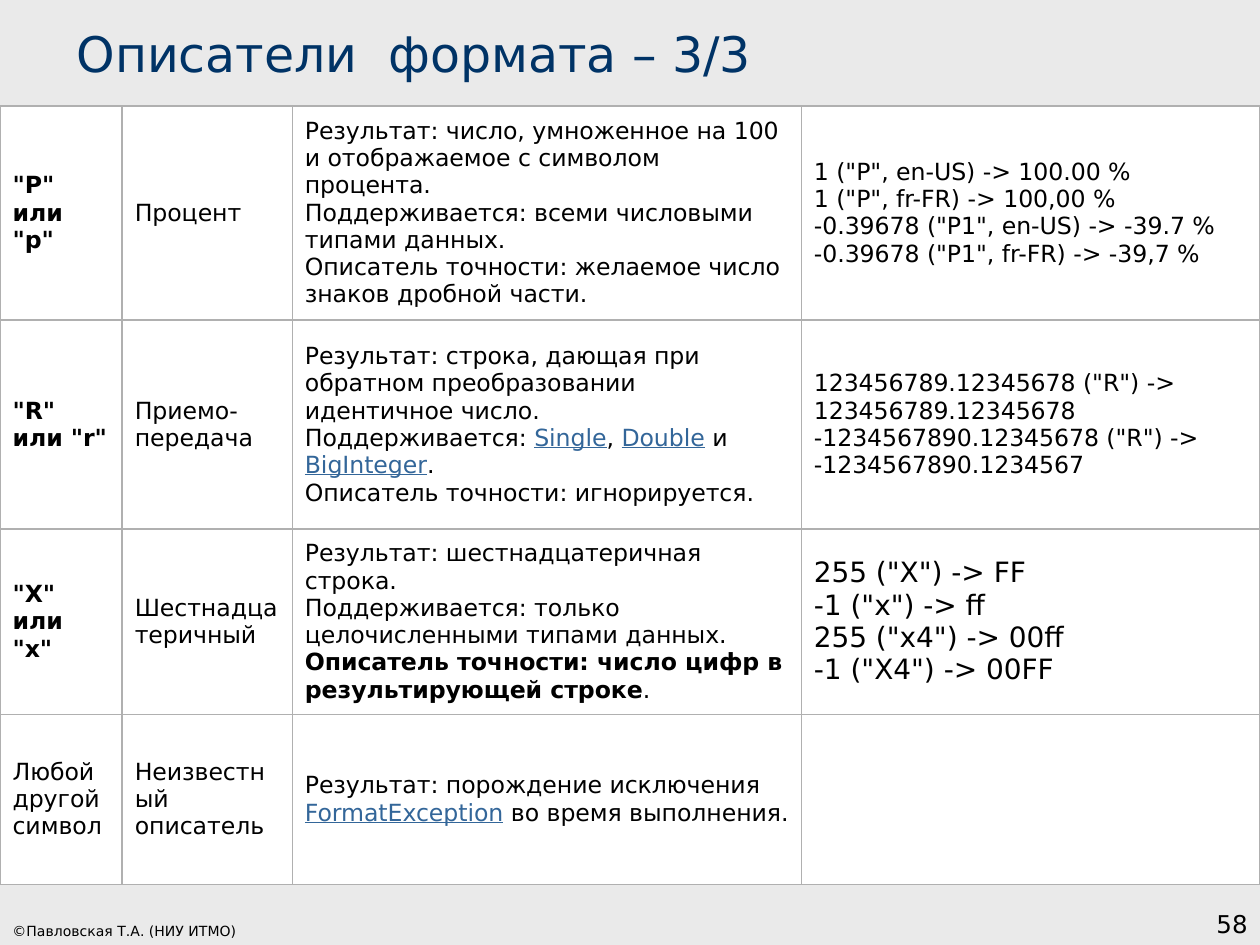
from lxml import etree
from pptx import Presentation
from pptx import util as u
from pptx.dml.color import RGBColor
from pptx.enum import text as t
from pptx.oxml import ns

BACKDROP = RGBColor(0xEA, 0xEA, 0xEA)
NAVY = RGBColor(0x00, 0x33, 0x66)
LINK = RGBColor(0x33, 0x66, 0x99)
BLACK = RGBColor(0x00, 0x00, 0x00)
WHITE = RGBColor(0xFF, 0xFF, 0xFF)
RULE = RGBColor(0xB0, 0xB0, 0xB0)
FONT = "DejaVu Sans"

deck = Presentation()
deck.slide_width, deck.slide_height = u.Inches(10), u.Inches(7.5)
col, row = deck.slide_width / 100, deck.slide_height / 100
slide = deck.slides.add_slide(deck.slide_layouts[6])
slide.background.fill.solid()
slide.background.fill.fore_color.rgb = BACKDROP


def write(frame, content, size=13.5, color=BLACK, align=t.PP_ALIGN.LEFT):
    frame.word_wrap = True
    for index, line in enumerate(content.split("\n")):
        paragraph = frame.add_paragraph() if index else frame.paragraphs[0]
        paragraph.alignment = align
        for strong, part in enumerate(line.split("*")):
            for linked, piece in enumerate(part.split("~")):
                if piece:
                    run = paragraph.add_run()
                    run.text = piece
                    run.font.name, run.font.size = FONT, u.Pt(size)
                    run.font.bold = strong % 2 == 1
                    run.font.underline = linked % 2 == 1
                    run.font.color.rgb = LINK if linked % 2 else color


def outline(cell):
    properties = cell._tc.get_or_add_tcPr()
    for side in ("lnL", "lnR", "lnT", "lnB"):
        line = etree.SubElement(properties, ns.qn(f"a:{side}"), w=str(u.Pt(1)))
        solid = etree.SubElement(line, ns.qn("a:solidFill"))
        etree.SubElement(solid, ns.qn("a:srgbClr"), val=str(RULE))


captions = [
    ("Описатели  формата – 3/3", (5.1, 1.73, 93.7, 7.6), dict(size=28, color=NAVY)),
    ("©Павловская Т.А. (НИУ ИТМО)", (0, 96.27, 31.1, 3.73), dict(size=8)),
    ("58", (79.2, 93.33, 20.8, 6.67), dict(size=14, align=t.PP_ALIGN.RIGHT)),
]
for caption, (left, top, width, height), style in captions:
    area = slide.shapes.add_textbox(
        int(left * col), int(top * row), int(width * col), int(height * row))
    area.text_frame.vertical_anchor = t.MSO_ANCHOR.BOTTOM
    write(area.text_frame, caption, **style)

specifiers = [
    ('*"P" или "p"*',
     "Процент",
     "Результат: число, умноженное на 100 и отображаемое с символом процента.\n"
     "Поддерживается: всеми числовыми типами данных.\n"
     "Описатель точности: желаемое число знаков дробной части.",
     '1 ("P", en-US) -> 100.00 %\n'
     '1 ("P", fr-FR) -> 100,00 %\n'
     '-0.39678 ("P1", en-US) -> -39.7 %\n'
     '-0.39678 ("P1", fr-FR) -> -39,7 %'),
    ('*"R" или "r"*',
     "Приемо-передача",
     "Результат: строка, дающая при обратном преобразовании идентичное число.\n"
     "Поддерживается: ~Single~, ~Double~ и ~BigInteger~.\n"
     "Описатель точности: игнорируется.",
     '123456789.12345678 ("R") -> 123456789.12345678\n'
     '-1234567890.12345678 ("R") -> -1234567890.1234567'),
    ('*"X" или "x"*',
     "Шестнадцатеричный",
     "Результат: шестнадцатеричная строка.\n"
     "Поддерживается: только целочисленными типами данных.\n"
     "*Описатель точности: число цифр в результирующей строке*.",
     '255 ("X") -> FF\n'
     '-1 ("x") -> ff\n'
     '255 ("x4") -> 00ff\n'
     '-1 ("X4") -> 00FF'),
    ("Любой другой символ",
     "Неизвестный описатель",
     "Результат: порождение исключения ~FormatException~ во время выполнения.",
     ""),
]
column_shares = [9.7, 13.5, 40.4, 36.4]
row_shares = [22.67, 22.13, 19.6, 18]
large_examples = (2, 3)

formats = slide.shapes.add_table(
    len(row_shares), len(column_shares), 0, int(11.2 * row),
    int(sum(column_shares) * col), int(sum(row_shares) * row)).table
for column, share in zip(formats.columns, column_shares):
    column.width = int(share * col)
for table_row, share in zip(formats.rows, row_shares):
    table_row.height = int(share * row)
for r, specifier in enumerate(specifiers):
    for c, content in enumerate(specifier):
        cell = formats.cell(r, c)
        outline(cell)
        cell.fill.solid()
        cell.fill.fore_color.rgb = WHITE
        cell.vertical_anchor = t.MSO_ANCHOR.MIDDLE
        write(cell.text_frame, content, size=16 if (r, c) == large_examples else 13.5)

deck.save("out.pptx")
